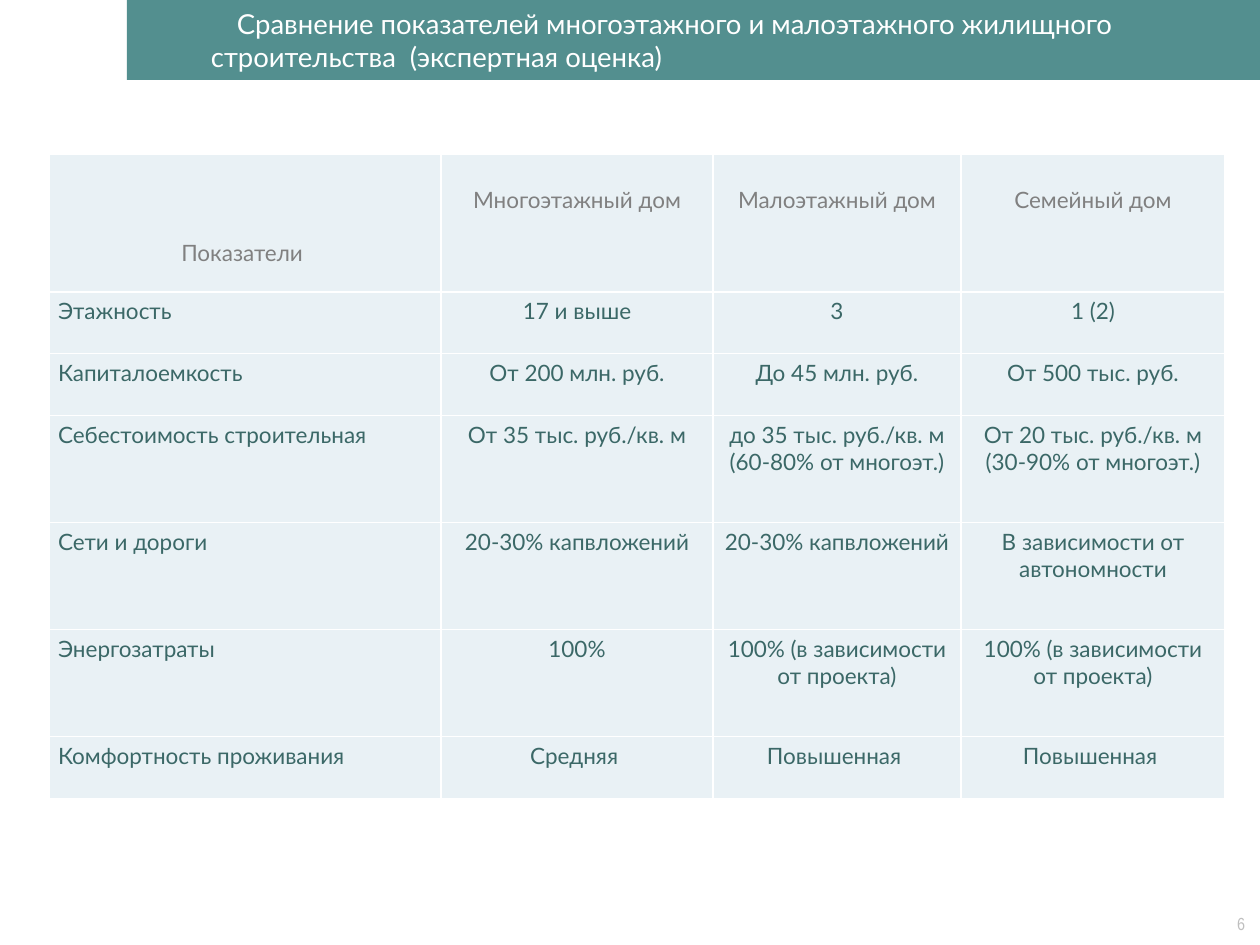
import dataclasses

import lxml.etree
import pptx
import pptx.dml.color
import pptx.enum.shapes
import pptx.enum.text
import pptx.oxml.ns
import pptx.util

PX = 914400 // 90
ALIGN = pptx.enum.text.PP_ALIGN
ANCHOR = pptx.enum.text.MSO_ANCHOR
RGBColor = pptx.dml.color.RGBColor

TEAL = RGBColor(0x53, 0x8F, 0x8F)
DARK_TEAL = RGBColor(0x3B, 0x68, 0x67)
PALE_BLUE = RGBColor(0xE9, 0xF1, 0xF5)
GRAY = RGBColor(0x80, 0x80, 0x80)
LIGHT_GRAY = RGBColor(0xBF, 0xBF, 0xBF)
WHITE = RGBColor(0xFF, 0xFF, 0xFF)


@dataclasses.dataclass(frozen=True)
class Insets:
    left: int
    top: int
    right: int
    bottom: int


@dataclasses.dataclass(frozen=True)
class Row:
    height: int
    cells: tuple[str, ...]


COLUMN_WIDTHS = (392, 272, 248, 264)
BODY_INSETS = Insets(9, 5, 9, 5)
HEADER_INSETS = Insets(9, 32, 9, 5)
CORNER_INSETS = Insets(1, 1, 1, 26)

ROWS = (
    Row(138, ("Показатели ", "Многоэтажный дом", "Малоэтажный дом", "Семейный дом")),
    Row(62, ("Этажность", "17 и выше", "3", "1 (2)")),
    Row(62, ("Капиталоемкость", "От 200 млн. руб.", "До 45 млн. руб.",
             "От 500 тыс. руб.")),
    Row(107, ("Себестоимость строительная", "От 35 тыс. руб./кв. м",
              "до 35 тыс. руб./кв. м\n(60-80% от многоэт.)",
              "От 20 тыс. руб./кв. м\n(30-90% от многоэт.)")),
    Row(107, ("Сети и дороги", "20-30% капвложений", "20-30% капвложений",
              "В зависимости от автономности")),
    Row(107, ("Энергозатраты", "100%", "100% (в зависимости от проекта)",
              "100% (в зависимости от проекта)")),
    Row(62, ("Комфортность проживания", "Средняя ", "Повышенная ", "Повышенная ")),
)


def write_text(frame, text: str, *, size: int, color: RGBColor, font: str = "Lato",
               align=ALIGN.LEFT) -> None:
    """Fill a text frame, one paragraph for each line of the text."""
    for index, line in enumerate(text.split("\n")):
        para = frame.add_paragraph() if index else frame.paragraphs[0]
        para.alignment = align
        span = para.add_run()
        span.text = line
        span.font.name = font
        span.font.size = pptx.util.Pt(size)
        span.font.color.rgb = color


def set_insets(target, insets: Insets) -> None:
    for side, length in dataclasses.asdict(insets).items():
        setattr(target, f"margin_{side}", length * PX)


def add_borders(cell, color: RGBColor, points: int) -> None:
    """Draw a solid line on all four sides of a cell."""
    properties = cell._tc.get_or_add_tcPr()
    for index, tag in enumerate(("a:lnL", "a:lnR", "a:lnT", "a:lnB")):
        line = lxml.etree.Element(pptx.oxml.ns.qn(tag), w=str(pptx.util.Pt(points)))
        fill = lxml.etree.SubElement(line, pptx.oxml.ns.qn("a:solidFill"))
        lxml.etree.SubElement(fill, pptx.oxml.ns.qn("a:srgbClr"), val=str(color))
        properties.insert(index, line)


def draw_table(page, left: int, top: int) -> None:
    width, height = sum(COLUMN_WIDTHS), sum(row.height for row in ROWS)
    table = page.shapes.add_table(len(ROWS), len(COLUMN_WIDTHS), left * PX, top * PX,
                                  width * PX, height * PX).table
    for column, column_width in zip(table.columns, COLUMN_WIDTHS):
        column.width = column_width * PX
    for row_index, row in enumerate(ROWS):
        table.rows[row_index].height = row.height * PX
        for column_index, text in enumerate(row.cells):
            cell = table.cell(row_index, column_index)
            is_header, is_label = row_index == 0, column_index == 0
            cell.fill.solid()
            cell.fill.fore_color.rgb = PALE_BLUE
            add_borders(cell, WHITE, 1)
            if is_header and is_label:
                cell.vertical_anchor = ANCHOR.BOTTOM
                set_insets(cell, CORNER_INSETS)
            else:
                set_insets(cell, HEADER_INSETS if is_header else BODY_INSETS)
            write_text(cell.text_frame, text, size=18,
                       color=GRAY if is_header else DARK_TEAL,
                       align=ALIGN.LEFT if is_label and not is_header else ALIGN.CENTER)


def draw_title(page) -> None:
    bar = page.shapes.add_shape(pptx.enum.shapes.MSO_SHAPE.RECTANGLE,
                                127 * PX, 0, 1133 * PX, 80 * PX)
    bar.shadow.inherit = False
    bar.fill.solid()
    bar.fill.fore_color.rgb = TEAL
    bar.line.fill.background()
    frame = bar.text_frame
    frame.word_wrap = True
    frame.vertical_anchor = ANCHOR.TOP
    set_insets(frame, Insets(14, 7, 14, 7))
    write_text(frame, "Сравнение показателей многоэтажного и малоэтажного жилищного "
                      "строительства  (экспертная оценка)", size=22, color=WHITE)
    indents = frame.paragraphs[0]._p.get_or_add_pPr()
    indents.set("marL", str(70 * PX))
    indents.set("indent", str(26 * PX))


def draw_page_number(page) -> None:
    box = page.shapes.add_textbox(1197 * PX, 905 * PX, 60 * PX, 37 * PX)
    frame = box.text_frame
    frame.word_wrap = True
    frame.vertical_anchor = ANCHOR.MIDDLE
    set_insets(frame, Insets(12, 6, 12, 6))
    write_text(frame, "6", size=14, color=LIGHT_GRAY, font="Arial Narrow",
               align=ALIGN.RIGHT)


def main() -> None:
    deck = pptx.Presentation()
    deck.slide_width, deck.slide_height = 1260 * PX, 945 * PX
    page = deck.slides.add_slide(deck.slide_layouts[6])

    # Comparison table
    draw_table(page, 49, 154)

    # Title bar and page number
    draw_title(page)
    draw_page_number(page)

    deck.save("out.pptx")


if __name__ == "__main__":
    main()
